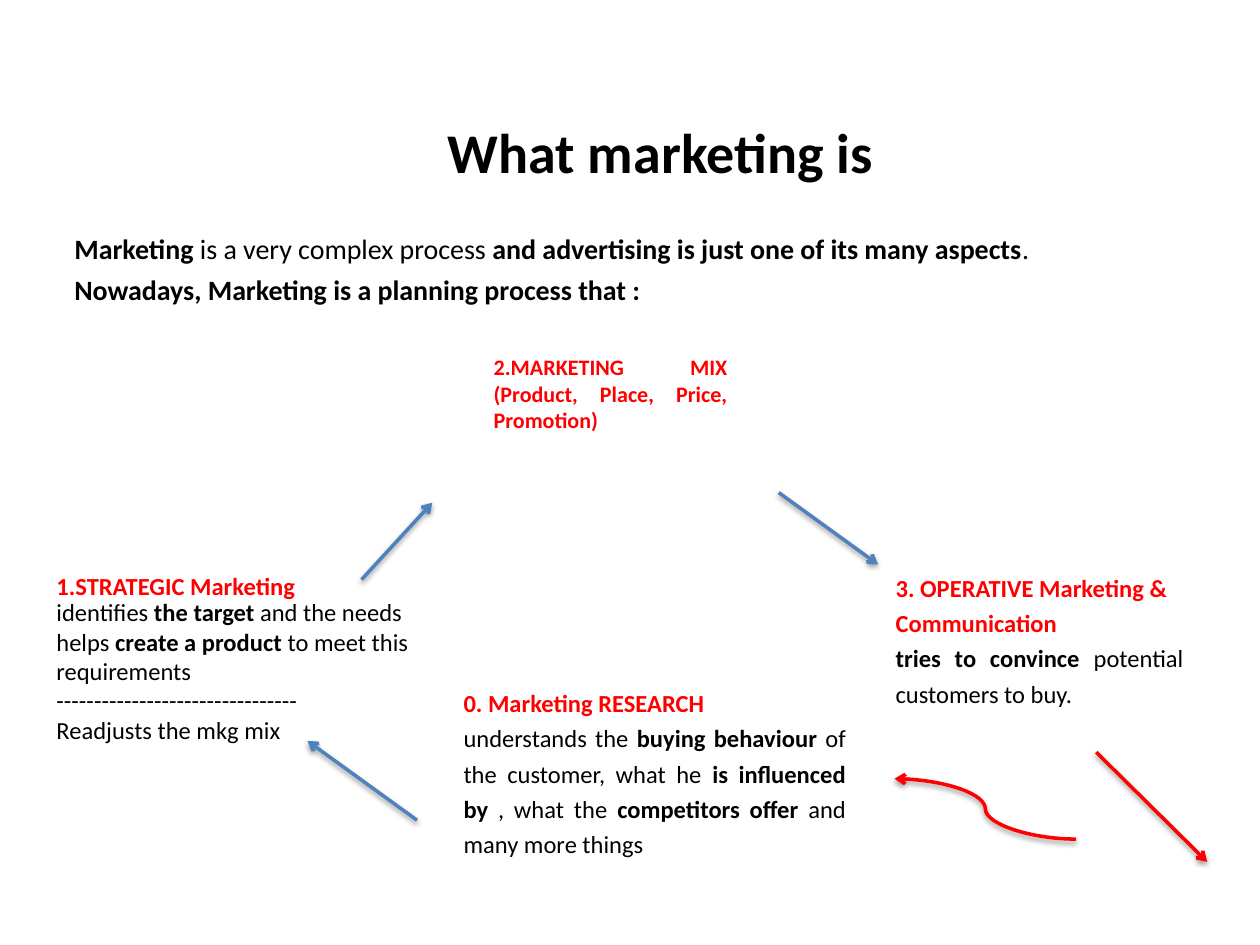
import pptx
import pptx.dml.color
import pptx.enum.shapes
import pptx.enum.text
import pptx.util
import lxml.etree

Pt = pptx.util.Pt
ALIGN = pptx.enum.text.PP_ALIGN
ANCHOR = pptx.enum.text.MSO_ANCHOR
CONNECTOR = pptx.enum.shapes.MSO_CONNECTOR
COLORS = {"text": "000000", "accent": "FF0000", "cycle": "4F81BD"}


class SlideBuilder:
    font_name = "Calibri"
    text_size = 14
    line_width = 2

    def __init__(self, slide):
        self.slide = slide

    def color(self, name):
        return pptx.dml.color.RGBColor.from_string(COLORS[name])

    def place(self, shape, box, anchor):
        shape.left, shape.top, shape.width, shape.height = map(Pt, box)
        frame = shape.text_frame
        frame.word_wrap = True
        frame.auto_size = pptx.enum.text.MSO_AUTO_SIZE.NONE
        frame.vertical_anchor = anchor
        return frame

    def paragraph(self, frame, runs, color="text", size=None, align=ALIGN.LEFT, spacing=1.0):
        paragraph = frame.paragraphs[0]
        if paragraph.runs:
            paragraph = frame.add_paragraph()
        paragraph.alignment = align
        paragraph.line_spacing = spacing
        paragraph.space_before = Pt(0)
        paragraph.font.name = self.font_name
        paragraph.font.size = Pt(size or self.text_size)
        paragraph.font.color.rgb = self.color(color)
        for text, bold in runs:
            run = paragraph.add_run()
            run.text = text
            run.font.bold = bold
        return paragraph

    def title(self, box, text):
        frame = self.place(self.slide.shapes.title, box, ANCHOR.BOTTOM)
        frame.margin_left = Pt(42)
        frame.margin_bottom = Pt(6)
        self.paragraph(frame, [(text, True)], size=32, align=ALIGN.CENTER)

    def body(self, box, paragraphs):
        frame = self.place(self.slide.placeholders[1], box, ANCHOR.TOP)
        for runs, options in paragraphs:
            paragraph = self.paragraph(frame, runs, size=16, **options)
            properties = paragraph._p.get_or_add_pPr()
            properties.set("marL", "0")
            properties.set("indent", "0")
            bullet = lxml.etree.Element(pptx.oxml.ns.qn("a:buNone"))
            font_defaults = properties.find(pptx.oxml.ns.qn("a:defRPr"))
            font_defaults.addprevious(bullet)

    def text(self, box, paragraphs, anchor=ANCHOR.TOP):
        shape = self.slide.shapes.add_textbox(*map(Pt, box))
        frame = self.place(shape, box, anchor)
        for runs, options in paragraphs:
            self.paragraph(frame, runs, **options)

    def arrow(self, start, end, color, kind=CONNECTOR.STRAIGHT):
        connector = self.slide.shapes.add_connector(kind, *map(Pt, start + end))
        connector.line.color.rgb = self.color(color)
        connector.line.width = Pt(self.line_width)
        line = connector.line._get_or_add_ln()
        lxml.etree.SubElement(line, pptx.oxml.ns.qn("a:tailEnd"), type="arrow")


def main():
    presentation = pptx.Presentation()
    presentation.slide_width, presentation.slide_height = Pt(720), Pt(540)
    builder = SlideBuilder(presentation.slides.add_slide(presentation.slide_layouts[1]))

    justified = {"align": ALIGN.JUSTIFY, "spacing": 1.2}
    heading = {"color": "accent", "spacing": 1.2}

    builder.title((36, 21.6, 648, 90), "What marketing is")
    builder.body((35.3, 128.9, 648, 356.4), [
        ([("Marketing ", True), ("is a very complex process ", False),
          ("and advertising is just one of its many aspects", True), (".", False)], {}),
        ([("Nowadays, Marketing is a planning process that :", True)], justified),
    ])
    builder.text((25.2, 288, 158.4, 90), [
        ([("1.STRATEGIC Marketing", True)], heading),
    ], ANCHOR.MIDDLE)
    builder.text((25.2, 337.7, 232.6, 108.7), [
        ([("identifies ", False), ("the target ", True), ("and the needs", False)], {}),
        ([("helps ", False), ("create a product ", True),
          ("to meet this requirements", False)], {}),
        ([("--------------------------------", False)], {}),
        ([("Readjusts the mkg mix", False)], {}),
    ])
    builder.text((275, 196.6, 147.6, 56.2), [
        ([("2.MARKETING MIX (Product, Place, Price, Promotion)", True)],
         {"color": "accent", "size": 12.6, "align": ALIGN.JUSTIFY}),
    ], ANCHOR.MIDDLE)
    builder.text((257.8, 395.3, 232.6, 90), [
        ([("0. Marketing RESEARCH", True)], heading | justified),
        ([("understands the ", False), ("buying behaviour ", True),
          ("of the customer, what he ", False), ("is influenced by ", True),
          (", what the ", False), ("competitors offer ", True),
          ("and many more things", False)], justified),
    ], ANCHOR.MIDDLE)
    builder.text((504.7, 320.4, 178.6, 87.8), [
        ([("3. OPERATIVE Marketing & Communication", True)], heading),
        ([("tries to convince ", True), ("potential customers to buy.", False)], justified),
    ])

    builder.arrow((206.6, 331.2), (247, 287.3), "cycle")
    builder.arrow((445, 281.5), (501.8, 322.6), "cycle")
    builder.arrow((238.3, 468.7), (175.7, 423.4), "cycle")
    builder.arrow((626.4, 429.8), (689.8, 492.5), "accent")
    builder.arrow((615, 479.5), (511.2, 445), "accent", CONNECTOR.CURVE)

    presentation.save("out.pptx")


if __name__ == "__main__":
    main()
